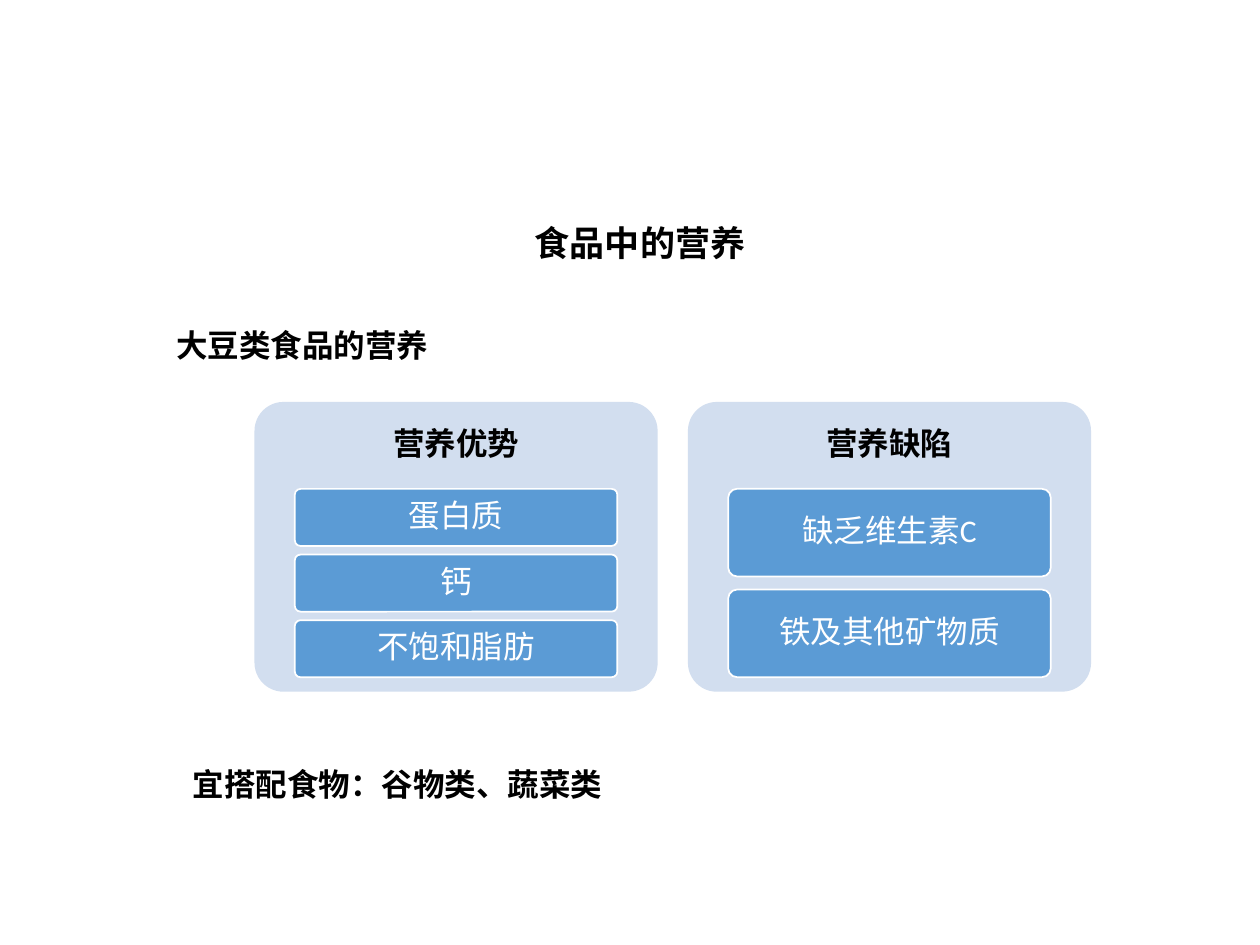
import pptx
import pptx.dml.color
import pptx.enum.shapes
import pptx.enum.text
import pptx.oxml.ns
import pptx.util
from pptx.util import Inches

COLORS = {"text": "000000", "panel": "D2DEEF", "item": "5B9BD5", "white": "FFFFFF"}
CJK_FONT = "Noto Sans CJK SC"
ALIGN = pptx.enum.text.PP_ALIGN
ANCHOR = pptx.enum.text.MSO_ANCHOR

PANELS = [
    ("营养优势", ["蛋白质", "钙", "不饱和脂肪"]),
    ("营养缺陷", ["缺乏维生素C", "铁及其他矿物质"]),
]
PANEL_LEFT, PANEL_TOP = 2.02, 3.19
PANEL_WIDTH, PANEL_HEIGHT = 3.2, 2.3
PANEL_PITCH = 3.44
HEADING_HEIGHT = 0.3 * PANEL_HEIGHT
ITEMS_HEIGHT = 0.65 * PANEL_HEIGHT
ITEM_WIDTH = 0.8 * PANEL_WIDTH
GAP_RATIO = 0.15


def rgb(name):
    return pptx.dml.color.RGBColor.from_string(COLORS[name])


def write_text(frame, text, *, size=18, font=CJK_FONT, color="text", bold=False,
               align=ALIGN.LEFT, anchor=ANCHOR.TOP, spacing=None, margins=(0.1, 0.05)):
    """Fill a text frame; margins are (horizontal, vertical) in inches."""
    frame.word_wrap = True
    frame.vertical_anchor = anchor
    frame.margin_left = frame.margin_right = Inches(margins[0])
    frame.margin_top = frame.margin_bottom = Inches(margins[1])
    paragraph = frame.paragraphs[0]
    paragraph.alignment = align
    paragraph.line_spacing = spacing
    run = paragraph.add_run()
    run.text = text
    run.font.size = pptx.util.Pt(size)
    run.font.name = font
    run.font.bold = bold
    run.font.color.rgb = rgb(color)
    east_asian = pptx.oxml.ns.qn("a:ea")
    run.font._element.find(pptx.oxml.ns.qn("a:latin")).addnext(
        run.font._element.makeelement(east_asian, {"typeface": CJK_FONT}))


class SlideBuilder:
    """Holds the current slide and the style of its elements."""

    centered = dict(font="Calibri", align=ALIGN.CENTER, anchor=ANCHOR.MIDDLE, spacing=0.9)

    def __init__(self, slide):
        self.slide = slide

    def text(self, text, left, top, width, height, **style):
        box = self.slide.shapes.add_textbox(
            Inches(left), Inches(top), Inches(width), Inches(height))
        write_text(box.text_frame, text, **style)

    def rounded(self, left, top, width, height, fill, line=None):
        shape = self.slide.shapes.add_shape(
            pptx.enum.shapes.MSO_SHAPE.ROUNDED_RECTANGLE,
            Inches(left), Inches(top), Inches(width), Inches(height))
        shape.adjustments[0] = 0.1
        shape.shadow.inherit = False
        shape.fill.solid()
        shape.fill.fore_color.rgb = rgb(fill)
        if line:
            shape.line.color.rgb = rgb(line)
            shape.line.width = pptx.util.Pt(1)
        else:
            shape.line.fill.background()
        return shape

    def panel(self, left, heading, items):
        """Draw a headed panel whose items share the space below the heading."""
        self.rounded(left, PANEL_TOP, PANEL_WIDTH, PANEL_HEIGHT, "panel")
        self.text(heading, left, PANEL_TOP, PANEL_WIDTH, HEADING_HEIGHT,
                  bold=True, margins=(0.07, 0.07), **self.centered)
        item_height = ITEMS_HEIGHT / (len(items) + (len(items) - 1) * GAP_RATIO)
        item_left = left + (PANEL_WIDTH - ITEM_WIDTH) / 2
        for index, item in enumerate(items):
            top = PANEL_TOP + HEADING_HEIGHT + index * item_height * (1 + GAP_RATIO)
            card = self.rounded(item_left, top, ITEM_WIDTH, item_height, "item", "white")
            write_text(card.text_frame, item, color="white",
                       margins=(0.05, 0.04), **self.centered)


def main():
    deck = pptx.Presentation()
    deck.slide_width, deck.slide_height = Inches(10), Inches(7.5)
    builder = SlideBuilder(deck.slides.add_slide(deck.slide_layouts[6]))

    builder.text("食品中的营养", 0.99, 1.71, 8.18, 0.44,
                 size=20, font="Arial", bold=True, align=ALIGN.CENTER)
    builder.text("大豆类食品的营养", 1.3, 2.54, 7.6, 0.4, bold=True)
    builder.text("宜搭配食物：谷物类、蔬菜类", 1.43, 6.02, 7.6, 0.4, bold=True)
    for column, (heading, items) in enumerate(PANELS):
        builder.panel(PANEL_LEFT + column * PANEL_PITCH, heading, items)

    deck.save("out.pptx")


if __name__ == "__main__":
    main()
